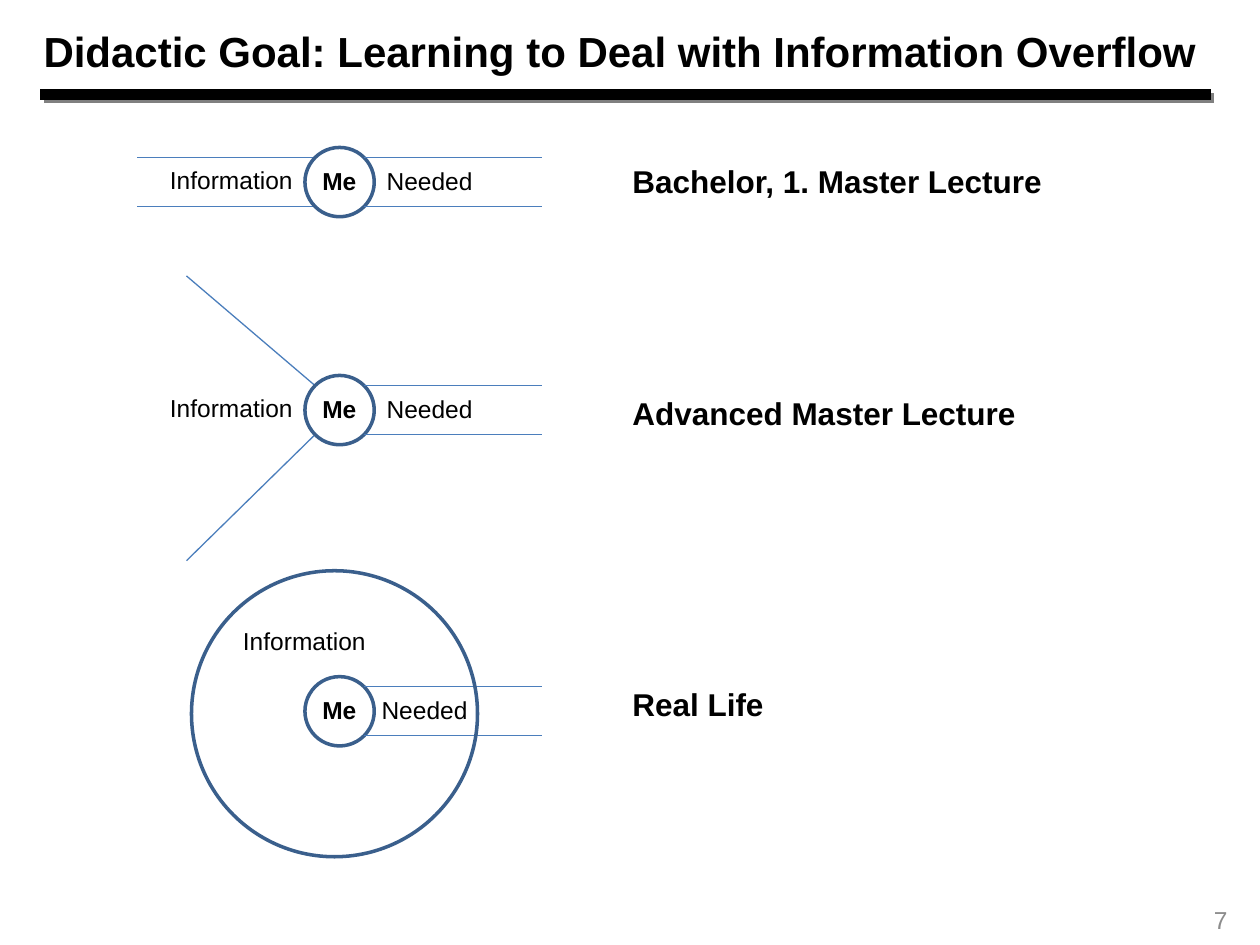
from lxml import etree
from pptx import Presentation
from pptx.dml.color import RGBColor
from pptx.enum import shapes, text
from pptx.oxml import ns
from pptx.util import Inches, Pt

BLACK = RGBColor(0x00, 0x00, 0x00)
GREY = RGBColor(0x8C, 0x8C, 0x8C)
CIRCLE_BLUE = RGBColor(0x3A, 0x5F, 0x8C)
LINE_BLUE = RGBColor(0x4B, 0x7E, 0xBC)
SHADOW_GREY = "808080"

ME_LEFT, ME_SIZE = 2.42, 0.55
INNER_LEFT, INNER_RIGHT = 2.5, 2.89   # where the channel lines meet the circle
CHANNEL_LEFT, CHANNEL_RIGHT = 1.09, 4.3
UPPER, LOWER = 0.08, 0.47             # channel lines below the circle's top
LABEL_WIDTH, LABEL_HEIGHT = 1.56, 0.34


def add_text(slide, wording, left, top, width, height, size, bold=False,
             color=BLACK, align=text.PP_ALIGN.LEFT,
             anchor=text.MSO_ANCHOR.TOP, wrap=True):
    box = slide.shapes.add_textbox(Inches(left), Inches(top),
                                   Inches(width), Inches(height))
    frame = box.text_frame
    frame.word_wrap = wrap
    frame.vertical_anchor = anchor
    paragraph = frame.paragraphs[0]
    paragraph.text = wording
    paragraph.alignment = align
    font = paragraph.font
    font.name, font.size, font.bold = "Arial", Pt(size), bold
    font.color.rgb = color


def add_label(slide, wording, left, top, bold=False):
    add_text(slide, wording, left, top, LABEL_WIDTH, LABEL_HEIGHT, 14, bold)


def add_line(slide, start, end, color=LINE_BLUE, width=0.75):
    """Draw a straight line and return its empty effect list."""
    line = slide.shapes.add_connector(shapes.MSO_CONNECTOR.STRAIGHT,
                                      *map(Inches, start + end))
    line.line.color.rgb = color
    line.line.width = Pt(width)
    return etree.SubElement(line._element.spPr, ns.qn("a:effectLst"))


def add_title_rule(slide):
    effects = add_line(slide, (0.32, 0.75), (9.61, 0.75), BLACK, 6)
    shadow = etree.SubElement(effects, ns.qn("a:outerShdw"),
                              dist=str(Pt(2.8)), dir="2700000",
                              algn="ctr", rotWithShape="0")
    etree.SubElement(shadow, ns.qn("a:srgbClr"), val=SHADOW_GREY)


def add_circle(slide, left, top, size):
    circle = slide.shapes.add_shape(shapes.MSO_SHAPE.OVAL, Inches(left),
                                    Inches(top), Inches(size), Inches(size))
    circle.shadow.inherit = False
    circle.fill.background()
    circle.line.color.rgb = CIRCLE_BLUE
    circle.line.width = Pt(2)


def add_me(slide, top, needed_left=2.97):
    """Draw the person with the channel of needed information."""
    add_circle(slide, ME_LEFT, top, ME_SIZE)
    for offset in (UPPER, LOWER):
        add_line(slide, (CHANNEL_RIGHT, top + offset),
                 (INNER_RIGHT, top + offset))
    add_label(slide, "Me", 2.46, top + 0.1, bold=True)
    add_label(slide, "Needed", needed_left, top + 0.1)


def add_incoming(slide, top, outer_left, outer_upper, outer_lower):
    """Draw the lines that bound the information on the left."""
    for offset, outer in ((UPPER, outer_upper), (LOWER, outer_lower)):
        add_line(slide, (INNER_LEFT, top + offset), (outer_left, outer))
    add_label(slide, "Information", 1.25, top + 0.09)


def add_stage(slide, wording, top, width=3.91, wrap=True):
    add_text(slide, wording, 4.92, top, width, 0.4, 18, bold=True, wrap=wrap)


def main():
    deck = Presentation()
    deck.slide_width, deck.slide_height = Inches(10), Inches(7.5)
    slide = deck.slides.add_slide(deck.slide_layouts[6])

    # Title, rule and page number
    add_text(slide, "Didactic Goal: Learning to Deal with Information Overflow",
             -0.16, 0.1, 10.16, 0.6, 24, bold=True,
             align=text.PP_ALIGN.CENTER, anchor=text.MSO_ANCHOR.MIDDLE)
    add_title_rule(slide)
    add_text(slide, "7", 7.51, 7.1, 2.33, 0.4, 14, color=GREY,
             align=text.PP_ALIGN.RIGHT, anchor=text.MSO_ANCHOR.MIDDLE)

    # Information equals what is needed
    bachelor = 1.17
    add_incoming(slide, bachelor, CHANNEL_LEFT,
                 bachelor + UPPER, bachelor + LOWER)
    add_me(slide, bachelor)
    add_stage(slide, "Bachelor, 1. Master Lecture", 1.24)

    # Information exceeds what is needed
    advanced = 2.98
    add_incoming(slide, advanced, 1.48, 2.19, 4.45)
    add_me(slide, advanced)
    add_stage(slide, "Advanced Master Lecture", 3.08)

    # Information from all sides
    add_me(slide, 5.37, needed_left=2.93)
    add_circle(slide, 1.52, 4.53, 2.27)
    add_label(slide, "Information", 1.83, 4.92)
    add_stage(slide, "Real Life", 5.39, width=1.25, wrap=False)

    deck.save("out.pptx")


if __name__ == "__main__":
    main()
